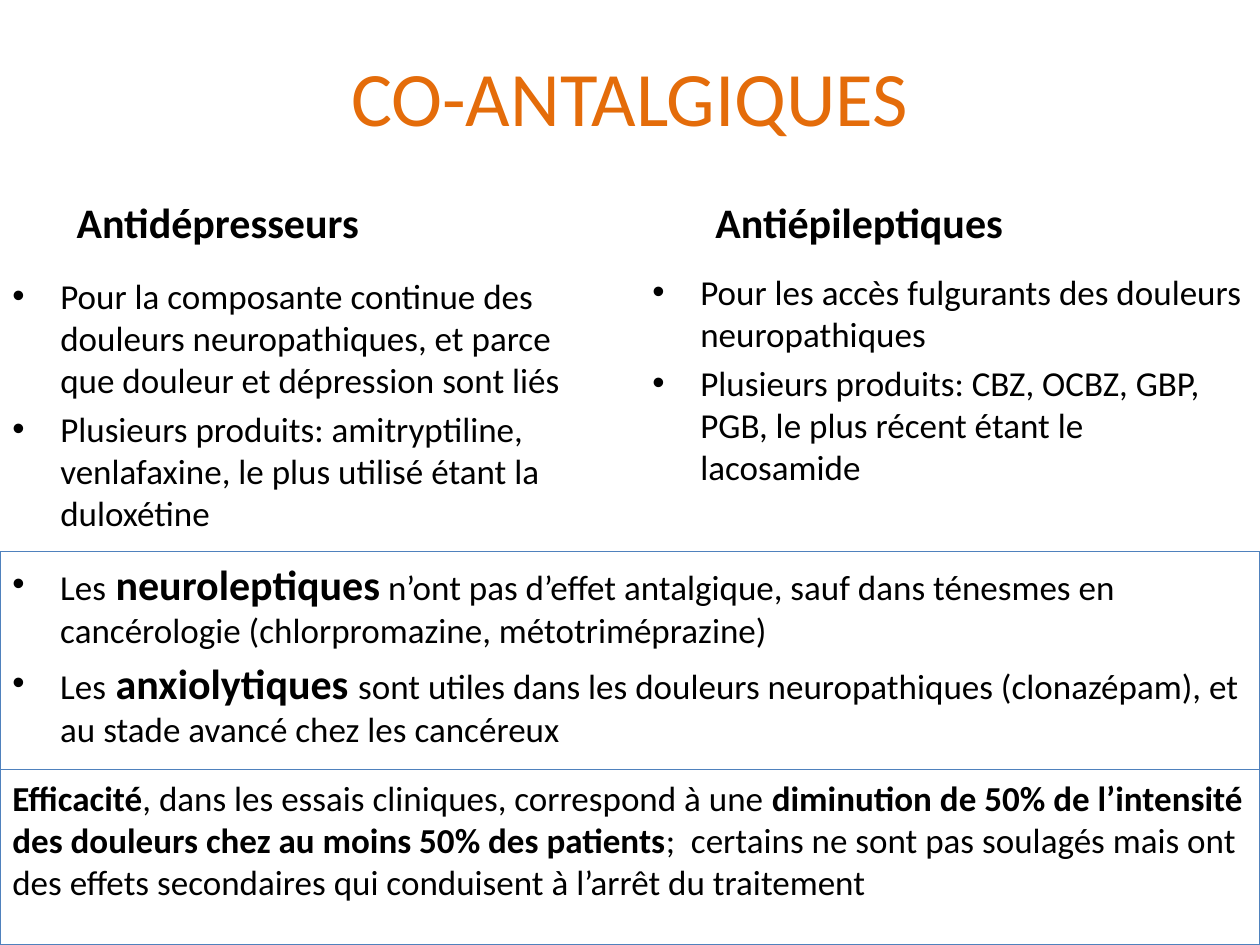
from lxml import etree
from pptx import Presentation
from pptx.dml.color import RGBColor
from pptx.enum.shapes import MSO_SHAPE
from pptx.enum.text import MSO_ANCHOR, PP_ALIGN
from pptx.oxml.ns import qn
from pptx.util import Inches, Pt

ORANGE = RGBColor(0xE4, 0x6C, 0x0A)
BLUE = RGBColor(0x4F, 0x81, 0xBD)
BLACK = RGBColor(0, 0, 0)
RECTANGLE = MSO_SHAPE.RECTANGLE
TOP, MIDDLE, BOTTOM = MSO_ANCHOR.TOP, MSO_ANCHOR.MIDDLE, MSO_ANCHOR.BOTTOM
LEFT, CENTER = PP_ALIGN.LEFT, PP_ALIGN.CENTER
FONT = "Calibri"
TITLE_ONLY = 5
BODY_SIZE, HEADING_SIZE, TITLE_SIZE = 20, 24, 44

COLUMNS = [
    ("Antidépresseurs", 0.51, (0, 2.13, 4.88, 2.25), [
        "Pour la composante continue des douleurs neuropathiques, et parce que douleur et dépression sont liés",
        "Plusieurs produits: amitryptiline, venlafaxine, le plus utilisé étant la duloxétine",
    ]),
    ("Antiépileptiques", 5.58, (5.08, 2.1, 4.92, 2.28), [
        "Pour les accès fulgurants des douleurs neuropathiques",
        "Plusieurs produits: CBZ, OCBZ, GBP, PGB, le plus récent étant le lacosamide",
    ]),
]
OTHER_DRUGS = [
    [("Les", BODY_SIZE, False), (" ", HEADING_SIZE, False),
     ("neuroleptiques", HEADING_SIZE, True),
     (" n’ont pas d’effet antalgique, sauf dans ténesmes en cancérologie (chlorpromazine, métotriméprazine)",
      BODY_SIZE, False)],
    [("Les", BODY_SIZE, False), (" ", HEADING_SIZE, False),
     ("anxiolytiques ", HEADING_SIZE, True),
     ("sont utiles dans les douleurs neuropathiques (clonazépam), et au stade avancé chez les cancéreux",
      BODY_SIZE, False)],
]
EFFICACY = [
    ("Efficacité", BODY_SIZE, True),
    (", dans les essais cliniques, correspond à une ", BODY_SIZE, False),
    ("diminution de 50% de l’intensité des douleurs chez au moins 50% des patients", BODY_SIZE, True),
    (";  certains ne sont pas soulagés mais ont des effets secondaires qui conduisent à l’arrêt du traitement",
     BODY_SIZE, False),
]


def add_bullet(paragraph):
    properties = paragraph._p.get_or_add_pPr()
    properties.set("marL", str(Inches(0.38)))
    properties.set("indent", str(Inches(-0.38)))
    etree.SubElement(properties, qn("a:buFont")).set("typeface", "Arial")
    etree.SubElement(properties, qn("a:buChar")).set("char", "•")


def fill_text(shape, paragraphs, bulleted=False, anchor=TOP):
    frame = shape.text_frame
    frame.word_wrap = True
    frame.vertical_anchor = anchor
    for index, runs in enumerate(paragraphs):
        paragraph = frame.add_paragraph() if index else frame.paragraphs[0]
        paragraph.alignment = LEFT
        paragraph.space_before = Pt(4)
        paragraph.font.name = FONT
        paragraph.font.color.rgb = BLACK
        if bulleted:
            add_bullet(paragraph)
        for text, size, bold in runs:
            run = paragraph.add_run()
            run.text = text
            run.font.name = FONT
            run.font.size = Pt(size)
            run.font.bold = bold
            run.font.color.rgb = BLACK


def add_title(slide, text):
    title = slide.shapes.title
    title.left, title.top = Inches(0.5), Inches(0.05)
    title.width, title.height = Inches(9), Inches(1.42)
    title.text_frame.text = text
    title.text_frame.vertical_anchor = MIDDLE
    paragraph = title.text_frame.paragraphs[0]
    paragraph.alignment = CENTER
    paragraph.font.name = FONT
    paragraph.font.size = Pt(TITLE_SIZE)
    paragraph.font.color.rgb = ORANGE


def add_column(slide, heading, heading_left, list_box, items):
    heading_shape = slide.shapes.add_textbox(
        Inches(heading_left), Inches(1.31), Inches(4.42), Inches(0.7))
    fill_text(heading_shape, [[(heading, HEADING_SIZE, True)]], anchor=BOTTOM)
    list_shape = slide.shapes.add_textbox(*map(Inches, list_box))
    fill_text(list_shape, [[(item, BODY_SIZE, False)] for item in items], bulleted=True)


def add_panel(slide, top, height, paragraphs, bulleted=False):
    panel = slide.shapes.add_shape(RECTANGLE, 0, Inches(top), Inches(10), Inches(height))
    panel.shadow.inherit = False
    panel.fill.background()
    panel.line.color.rgb = BLUE
    panel.line.width = Pt(0.75)
    fill_text(panel, paragraphs, bulleted)


def main():
    presentation = Presentation()
    presentation.slide_width = Inches(10)
    presentation.slide_height = Inches(7.5)
    slide = presentation.slides.add_slide(presentation.slide_layouts[TITLE_ONLY])
    add_title(slide, "CO-ANTALGIQUES")
    for column in COLUMNS:
        add_column(slide, *column)
    add_panel(slide, 4.38, 1.73, OTHER_DRUGS, bulleted=True)
    add_panel(slide, 6.11, 1.39, [EFFICACY])
    presentation.save("out.pptx")


if __name__ == "__main__":
    main()
